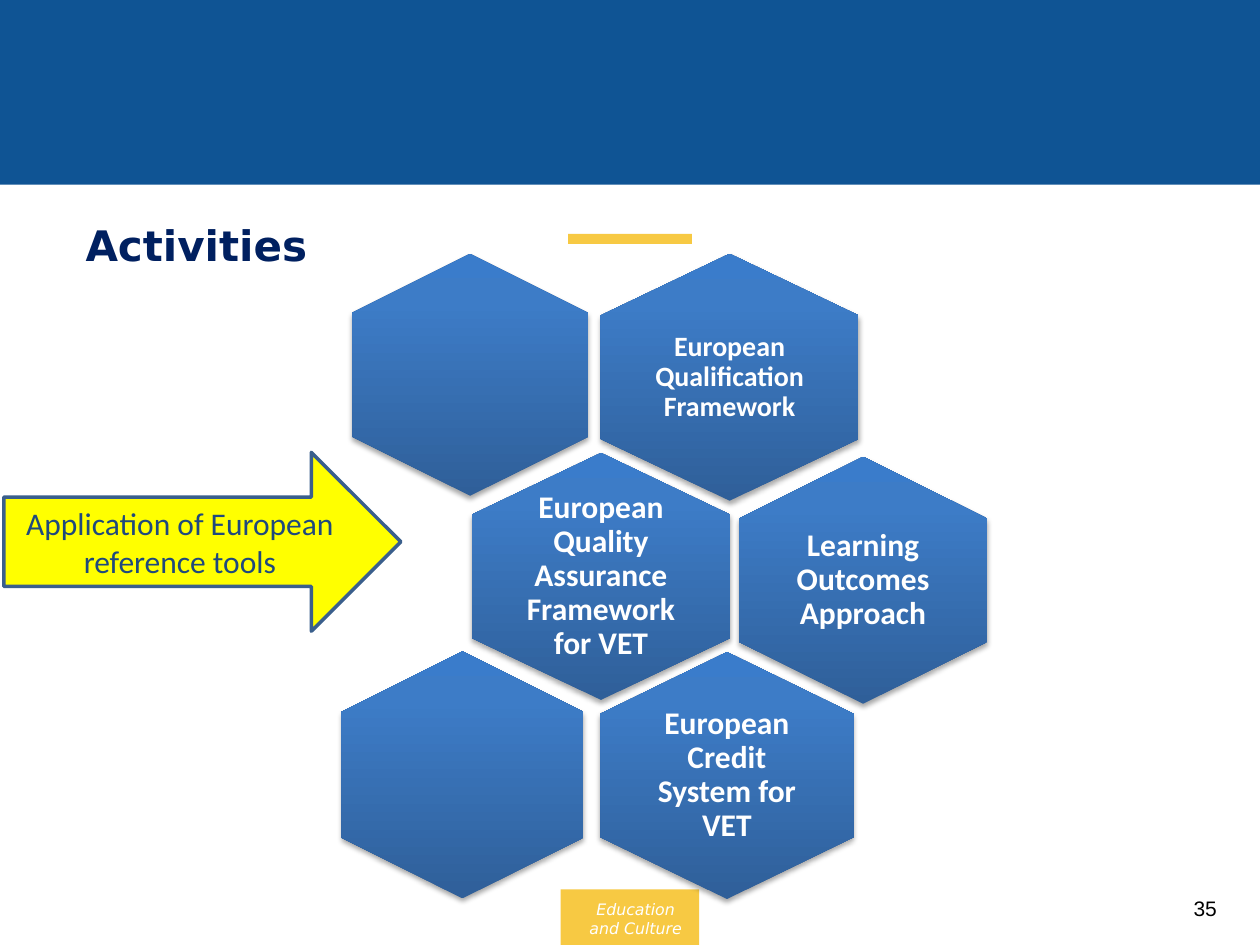
from lxml import etree
from pptx import Presentation
from pptx.dml.color import RGBColor
from pptx.enum import shapes, text
from pptx.oxml import ns
from pptx.util import Pt

BLUE = RGBColor(0x0F, 0x54, 0x94)
GOLD = RGBColor(0xF7, 0xC9, 0x43)
NAVY = RGBColor(0x00, 0x20, 0x60)
INK = RGBColor(0x1F, 0x49, 0x7D)
EDGE = RGBColor(0x3A, 0x5F, 0x8C)
YELLOW = RGBColor(0xFF, 0xFF, 0x00)
WHITE = RGBColor(0xFF, 0xFF, 0xFF)
BLACK = RGBColor(0x00, 0x00, 0x00)
SHADE = [(0, RGBColor(0x2F, 0x5F, 0x99)),
         (80, RGBColor(0x3D, 0x7C, 0xC7)),
         (100, RGBColor(0x3A, 0x7C, 0xCB))]

WIDE, HIGH = 720, 540
SHAPE = shapes.MSO_SHAPE
ALIGN = text.PP_ALIGN
ANCHOR = text.MSO_ANCHOR

# Hexagons: centre x, centre y, width, height, label, size, inset
CELLS = [
    (416.9, 215.6, 147.6, 141.1, "European Qualification Framework", 16, 5),
    (268.6, 214.2, 134.6, 138.2, None, 0, 0),
    (343.4, 329.4, 147.6, 141.1,
     "European Quality Assurance Framework for VET", 18, 5),
    (493.2, 331.6, 141.8, 141.1, "Learning Outcomes Approach", 18, 0),
    (415.4, 443.2, 144.7, 141.1, "European Credit System for VET", 18, 5),
    (264.2, 442.8, 138.2, 141.1, None, 0, 0),
]


def write(shape, words, size, color, font="Calibri", bold=False, italic=False,
          align=ALIGN.CENTER, anchor=ANCHOR.TOP, inset=None, line=None):
    frame = shape.text_frame
    frame.word_wrap = True
    frame.vertical_anchor = anchor
    if inset is not None:
        frame.margin_left = frame.margin_right = Pt(inset)
        frame.margin_top = frame.margin_bottom = Pt(inset)
    para = frame.paragraphs[0]
    para.alignment = align
    if line:
        para.line_spacing = line
    run = para.add_run()
    run.text = words
    run.font.name, run.font.size = font, Pt(size)
    run.font.bold, run.font.italic = bold, italic
    run.font.color.rgb = color


def label(slide, box, words, size, color, **style):
    write(slide.shapes.add_textbox(*map(Pt, box)), words, size, color, **style)


def block(slide, kind, box, fill, edge=None):
    shape = slide.shapes.add_shape(kind, *map(Pt, box))
    shape.shadow.inherit = False
    shape.fill.solid()
    shape.fill.fore_color.rgb = fill
    if edge:
        shape.line.color.rgb, shape.line.width = edge, Pt(2)
    else:
        shape.line.fill.background()
    return shape


def add(parent, tag, **attrs):
    return etree.SubElement(parent, ns.qn("a:" + tag), attrs)


def shade(shape):
    """Vertical gradient that stays upright when the shape is turned."""
    shape.fill.gradient()
    shape.fill.gradient_angle = 90
    grad = shape._element.spPr.find(ns.qn("a:gradFill"))
    grad.set("rotWithShape", "0")
    stops = grad.find(ns.qn("a:gsLst"))
    for stop in list(stops):
        stops.remove(stop)
    for pos, color in SHADE:
        add(add(stops, "gs", pos=str(pos * 1000)), "srgbClr", val=str(color))


def cast(shape):
    """Soft shadow straight below."""
    effect = shape._element.spPr.find(ns.qn("a:effectLst"))
    drop = add(effect, "outerShdw", blurRad=str(Pt(3.1)), dist=str(Pt(1.8)),
               dir="5400000", rotWithShape="0")
    add(add(drop, "srgbClr", val=str(BLACK)), "alpha", val="35000")


def cell(slide, mid, top, wide, high, words, size, inset):
    # Turned a quarter, so the frame's sides are swapped
    hexa = block(slide, SHAPE.HEXAGON,
                 (mid - high / 2, top - wide / 2, high, wide), BLUE)
    hexa.rotation = 90
    hexa.adjustments[0] = 0.25
    shade(hexa)
    cast(hexa)
    if words:
        w, h = wide * 0.67, high * 0.67
        label(slide, (mid - w / 2, top - h / 2, w, h), words, size, WHITE,
              bold=True, anchor=ANCHOR.MIDDLE, inset=inset, line=0.9)


def header(slide, x, y, w, h):
    block(slide, SHAPE.RECTANGLE, (x, y, w, h), BLUE)
    block(slide, SHAPE.RECTANGLE,
          (x + w / 2 - 35.3, y + h + 28, 70.6, 5.8), GOLD)
    label(slide, (x + 41.8, y + h + 16, 642, 46), "Activities", 24, NAVY,
          font="DejaVu Sans", bold=True, align=ALIGN.JUSTIFY)


def footer(slide, x, y, w, h):
    left = x + w / 2 - 39.6
    block(slide, SHAPE.RECTANGLE, (left, y, 79.2, h), GOLD)
    label(slide, (left + 11.5, y + 5.8, 62.6, 21.6), "Education and Culture",
          9, WHITE, font="DejaVu Sans", italic=True, inset=0)
    label(slide, (x + w - 54, y, 45.4, 21.6), "35", 12, BLACK, font="Arial")


def arrow(slide, *box):
    shape = block(slide, SHAPE.RIGHT_ARROW, box, YELLOW, EDGE)
    write(shape, "Application of European reference tools", 18, INK,
          anchor=ANCHOR.MIDDLE)


def main():
    deck = Presentation()
    deck.slide_width, deck.slide_height = Pt(WIDE), Pt(HIGH)
    slide = deck.slides.add_slide(deck.slide_layouts[6])
    header(slide, 0, 0, WIDE, 105.6)
    footer(slide, 0, 508.2, WIDE, HIGH - 508.2)
    # Honeycomb of reference tools
    for item in CELLS:
        cell(slide, *item)
    arrow(slide, 2.2, 258.5, 226.8, 102.2)
    deck.save("out.pptx")


if __name__ == "__main__":
    main()
